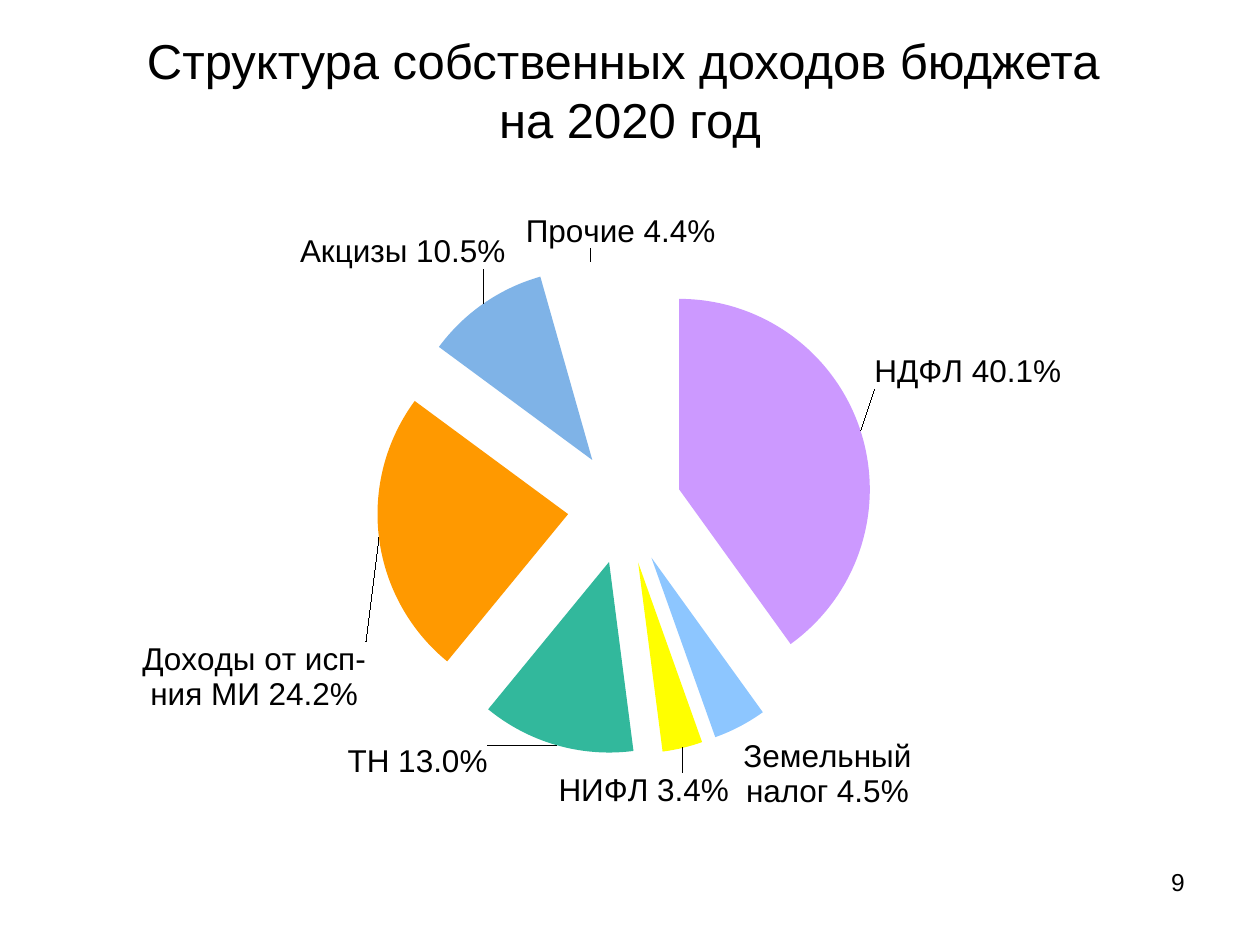
from dataclasses import dataclass

from pptx import Presentation
from pptx.chart.data import CategoryChartData
from pptx.dml.color import RGBColor as RGB
from pptx.enum.chart import XL_CHART_TYPE as CT, XL_LABEL_POSITION as LP
from pptx.enum.text import MSO_ANCHOR as ANCHOR, PP_ALIGN as ALIGN
from pptx.oxml import parse_xml
from pptx.oxml.ns import nsdecls
from pptx.util import Pt


@dataclass(frozen=True)
class Theme:
    font: str = "Arial"
    ink: str = "000000"
    title: int = 28
    label: int = 18
    number: int = 14


T = Theme()
PX = 914400 // 126
CHART_W, CHART_H = 1134, 634


def style(font, size):
    font.name = T.font
    font.size = Pt(size)
    font.color.rgb = RGB.from_string(T.ink)


def layout(x, y, inner=""):
    return (f'<c:layout {nsdecls("c")}><c:manualLayout>{inner}'
            f'<c:x val="{x:.3f}"/><c:y val="{y:.3f}"/>')


prs = Presentation()
prs.slide_width, prs.slide_height = 1260 * PX, 945 * PX
s = prs.slides.add_slide(prs.slide_layouts[5])

title = s.shapes.title
title.left, title.top, title.width, title.height = (v * PX for v in (63, 42, 1134, 94))
tf = title.text_frame
tf.vertical_anchor = ANCHOR.MIDDLE
p = tf.paragraphs[0]
p.alignment = ALIGN.CENTER
for i, line in enumerate(("Структура собственных доходов бюджета ", "на 2020 год")):
    if i:
        p.add_line_break()
    r = p.add_run()
    r.text = line
    style(r.font, T.title)

incomes = [
    ("НДФЛ", 40.1, "CC99FF", (7, -39)),
    ("Земельный налог", 4.5, "8DC6FF", (0, 6)),
    ("НИФЛ", 3.4, "FFFF00", (-126, 17)),
    ("ТН", 13, "32B89C", (-67, -8)),
    ("Доходы от исп-ния МИ", 24.2, "FF9900", (-6, 103)),
    ("Акцизы", 10.5, "7FB3E7", (26, -28)),
    ("Прочие", 4.4, "FFFFFF", (126, -6)),
]
data = CategoryChartData()
data.categories = [name for name, *_ in incomes]
data.add_series("Доходы", [value for _, value, *_ in incomes])
chart = s.shapes.add_chart(CT.PIE, 63 * PX, 199 * PX, CHART_W * PX, CHART_H * PX, data).chart
chart.has_title = False
chart.has_legend = False
style(chart.font, T.label)

plot = chart.plots[0]
plot.vary_by_categories = True
ser = plot.series[0]
for i, (_, _, color, _) in enumerate(incomes):
    fmt = ser.points[i].format
    fmt.fill.solid()
    fmt.fill.fore_color.rgb = RGB.from_string(color)
    fmt.line.fill.background()
explosion = parse_xml(f'<c:explosion {nsdecls("c")} val="30"/>')
ser._element.find("{*}dPt").addprevious(explosion)

labels = ser.data_labels
labels.show_value = False
labels.show_category_name = True
labels.show_percentage = True
labels.number_format = "0.0%"
labels.number_format_is_linked = False
labels.position = LP.OUTSIDE_END
style(labels.font, T.label)
dLbls = labels._element
dLbls.find("{*}showBubbleSize").addnext(
    parse_xml(f'<c:separator {nsdecls("c")}> </c:separator>'))
for i, (*_, (dx, dy)) in enumerate(incomes):
    dLbls.insert(i, parse_xml(
        f'<c:dLbl {nsdecls("c")}><c:idx val="{i}"/>'
        f'{layout(dx / CHART_W, dy / CHART_H)}</c:manualLayout></c:layout>'
        '<c:numFmt formatCode="0.0%" sourceLinked="0"/><c:dLblPos val="outEnd"/>'
        '<c:showLegendKey val="0"/><c:showVal val="0"/><c:showCatName val="1"/>'
        '<c:showSerName val="0"/><c:showPercent val="1"/><c:showBubbleSize val="0"/>'
        '<c:separator> </c:separator></c:dLbl>'))

plot_area = chart._chartSpace.chart.plotArea
for old in plot_area.findall("{*}layout"):
    plot_area.remove(old)
frame = ('<c:layoutTarget val="inner"/><c:xMode val="edge"/><c:yMode val="edge"/>')
plot_area.insert(0, parse_xml(
    f'{layout(314 / CHART_W, 60 / CHART_H, frame)}<c:w val="{496 / CHART_W:.3f}"/>'
    f'<c:h val="{496 / CHART_H:.3f}"/></c:manualLayout></c:layout>'))

sp = s.shapes.add_textbox(903 * PX, 861 * PX, 294 * PX, 66 * PX)
tf = sp.text_frame
tf.word_wrap = True
p = tf.paragraphs[0]
p.alignment = ALIGN.RIGHT
r = p.add_run()
r.text = "9"
style(r.font, T.number)

prs.save("out.pptx")
